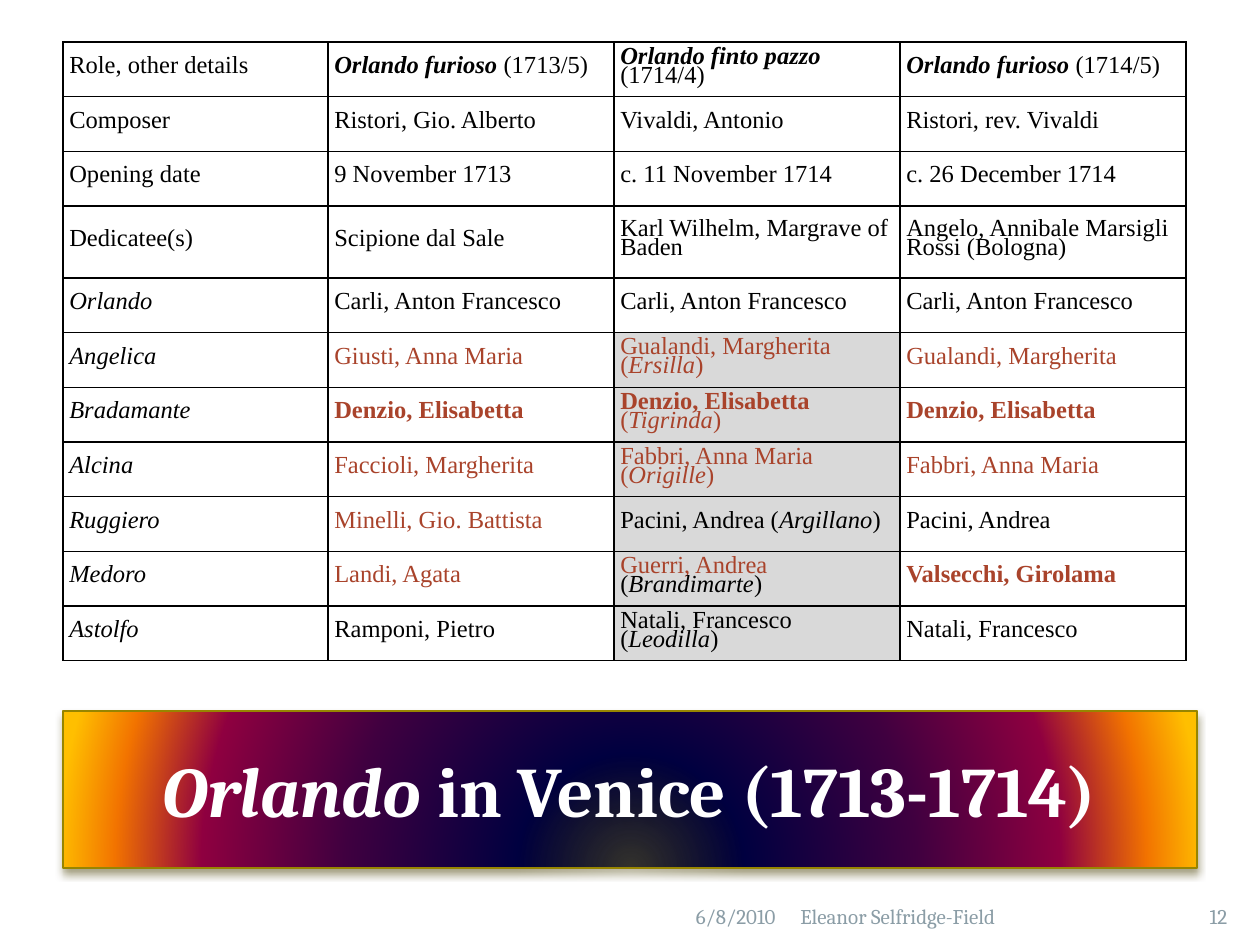
from lxml import etree
from pptx import Presentation
from pptx import util as u
from pptx.dml.color import RGBColor
from pptx.enum import text
from pptx.oxml import parse_xml
from pptx.oxml.ns import nsdecls, qn

SERIF, TITLE_FONT = "Times New Roman", "Cambria"
BLACK, RED, WHITE, GREY = "000000", "A9432B", "FFFFFF", "8B9DA6"
SHADE, GOLD = "D9D9D9", "978500"
ALIGN, ANCHOR = text.PP_ALIGN, text.MSO_ANCHOR

# Table geometry
COLS = [265, 286, 286, 286]
ROW_TENTHS = [547] * 3 + [720] + [547] * 7
FIRST_ROLE_ROW, FIRST_SHADED_ROW, SHADED_COL = 4, 5, 2

# Gradient stops from the bottom centre outwards: position %, colour, opacity %
STOPS = [(0, "000000", 72), (20, "000040", 100), (50, "400040", 100),
         (75, "8F0040", 100), (90, "F27300", 100), (100, "FFBF00", 100)]


def px(n):
    return u.Emu(round(n * 914400 / 126))


def rgb(value):
    return RGBColor.from_string(value)


def opera(name, year):
    return [(name, "bi", BLACK), (f" ({year})", "", BLACK)]


def singer(name, style="", color=RED):
    return [(name, style, color)]


def in_role(name, role, style="", color=RED, role_color=RED):
    """A singer followed by the character's name in brackets."""
    return [(name, style, color), (" (", "", role_color),
            (role, "i", role_color), (")", "", role_color)]


# A plain string is black; a list holds (text, style, colour) runs
ROWS = [
    ["Role, other details", opera("Orlando furioso", "1713/5"),
     opera("Orlando finto pazzo", "1714/4"), opera("Orlando furioso", "1714/5")],
    ["Composer", "Ristori, Gio. Alberto", "Vivaldi, Antonio", "Ristori, rev. Vivaldi"],
    ["Opening date", "9 November 1713", "c. 11 November 1714", "c. 26 December 1714"],
    ["Dedicatee(s)", "Scipione dal Sale", "Karl Wilhelm, Margrave of Baden",
     "Angelo, Annibale Marsigli Rossi (Bologna)"],
    ["Orlando"] + ["Carli, Anton Francesco"] * 3,
    ["Angelica", singer("Giusti, Anna Maria"),
     in_role("Gualandi, Margherita", "Ersilla"), singer("Gualandi, Margherita")],
    ["Bradamante", singer("Denzio, Elisabetta", "b"),
     in_role("Denzio, Elisabetta", "Tigrinda", "b"), singer("Denzio, Elisabetta", "b")],
    ["Alcina", singer("Faccioli, Margherita"),
     in_role("Fabbri, Anna Maria", "Origille"), singer("Fabbri, Anna Maria")],
    ["Ruggiero", singer("Minelli, Gio. Battista"),
     in_role("Pacini, Andrea", "Argillano", "", BLACK, BLACK), "Pacini, Andrea"],
    ["Medoro", singer("Landi, Agata"),
     in_role("Guerri, Andrea", "Brandimarte", "", RED, BLACK),
     singer("Valsecchi, Girolama", "b")],
    ["Astolfo", "Ramponi, Pietro",
     in_role("Natali, Francesco", "Leodilla", "", BLACK, BLACK), "Natali, Francesco"],
]


def write_runs(p, runs, size, font):
    p.font.size, p.font.name = u.Pt(size), font
    for content, style, color in runs:
        r = p.add_run()
        r.text = content
        r.font.bold, r.font.italic = "b" in style, "i" in style
        r.font.color.rgb = rgb(color)


def add_borders(cell):
    tc_pr = cell._tc.get_or_add_tcPr()
    for side in ("lnL", "lnR", "lnT", "lnB"):
        ln = etree.SubElement(tc_pr, qn(f"a:{side}"), w=str(u.Pt(1)))
        fill = etree.SubElement(ln, qn("a:solidFill"))
        etree.SubElement(fill, qn("a:srgbClr"), val=BLACK)


def fill_cell(cell, runs, shaded):
    cell.margin_left = cell.margin_right = u.Inches(0.05)
    cell.margin_top = cell.margin_bottom = 0
    cell.vertical_anchor = ANCHOR.MIDDLE
    add_borders(cell)
    if shaded:
        cell.fill.solid()
        cell.fill.fore_color.rgb = rgb(SHADE)
    else:
        cell.fill.background()
    p = cell.text_frame.paragraphs[0]
    p.line_spacing, p.space_before = u.Pt(10.9), u.Pt(7)
    write_runs(p, runs, 14, SERIF)


def add_cast_table(s):
    frame = s.shapes.add_table(len(ROWS), len(COLS), px(63), px(42),
                               px(sum(COLS)), px(sum(ROW_TENTHS) / 10))
    table = frame.table
    table.first_row = table.horz_banding = False
    for column, width in zip(table.columns, COLS):
        column.width = px(width)
    for row, tenths in zip(table.rows, ROW_TENTHS):
        row.height = px(tenths / 10)
    for i, row in enumerate(ROWS):
        for j, content in enumerate(row):
            if isinstance(content, str):
                style = "i" if j == 0 and i >= FIRST_ROLE_ROW else ""
                content = [(content, style, BLACK)]
            shaded = j == SHADED_COL and i >= FIRST_SHADED_ROW
            fill_cell(table.cell(i, j), content, shaded)


def style_title(sp):
    sp.left, sp.top, sp.width, sp.height = px(63), px(711), px(1134), px(157)
    # Radial gradient, outline and soft shadow
    stops = "".join(
        f'<a:gs pos="{pos * 1000}"><a:srgbClr val="{color}">'
        f'<a:alpha val="{alpha * 1000}"/></a:srgbClr></a:gs>'
        for pos, color, alpha in STOPS)
    sp_pr = sp._element.spPr
    sp_pr.append(parse_xml(
        f'<a:prstGeom {nsdecls("a")} prst="rect"><a:avLst/></a:prstGeom>'))
    sp_pr.append(parse_xml(
        f'<a:gradFill {nsdecls("a")} rotWithShape="1"><a:gsLst>{stops}</a:gsLst>'
        '<a:path path="circle"><a:fillToRect l="50000" t="100000" r="50000"/>'
        '</a:path></a:gradFill>'))
    sp.line.color.rgb = rgb(GOLD)
    sp.line.width = u.Pt(0.75)
    sp_pr.append(parse_xml(
        f'<a:effectLst {nsdecls("a")}><a:outerShdw blurRad="{u.Pt(4.5)}" '
        f'dist="{u.Pt(3)}" dir="5400000" rotWithShape="0"><a:srgbClr val="483F00">'
        '<a:alpha val="48000"/></a:srgbClr></a:outerShdw></a:effectLst>'))
    # Wording
    tf = sp.text_frame
    tf.word_wrap = True
    tf.auto_size = text.MSO_AUTO_SIZE.NONE
    tf.vertical_anchor = ANCHOR.MIDDLE
    p = tf.paragraphs[0]
    p.alignment = ALIGN.CENTER
    write_runs(p, [("Orlando", "bi", WHITE), (" in Venice (1713-1714)", "b", WHITE)],
               40.5, TITLE_FONT)


def add_footer(s, content, left, width, align):
    tf = s.shapes.add_textbox(px(left), px(869), px(width), px(66)).text_frame
    tf.word_wrap = True
    tf.vertical_anchor = ANCHOR.BOTTOM
    p = tf.paragraphs[0]
    p.alignment = align
    write_runs(p, [(content, "", GREY)], 12, TITLE_FONT)


def main():
    prs = Presentation()
    prs.slide_width, prs.slide_height = px(1260), px(945)
    s = prs.slides.add_slide(prs.slide_layouts[5])
    style_title(s.shapes.title)
    add_footer(s, "6/8/2010", 494, 294, ALIGN.RIGHT)
    add_footer(s, "12", 1187, 63, ALIGN.CENTER)
    add_footer(s, "Eleanor Selfridge-Field", 788, 399, ALIGN.LEFT)
    add_cast_table(s)
    prs.save("out.pptx")


if __name__ == "__main__":
    main()
